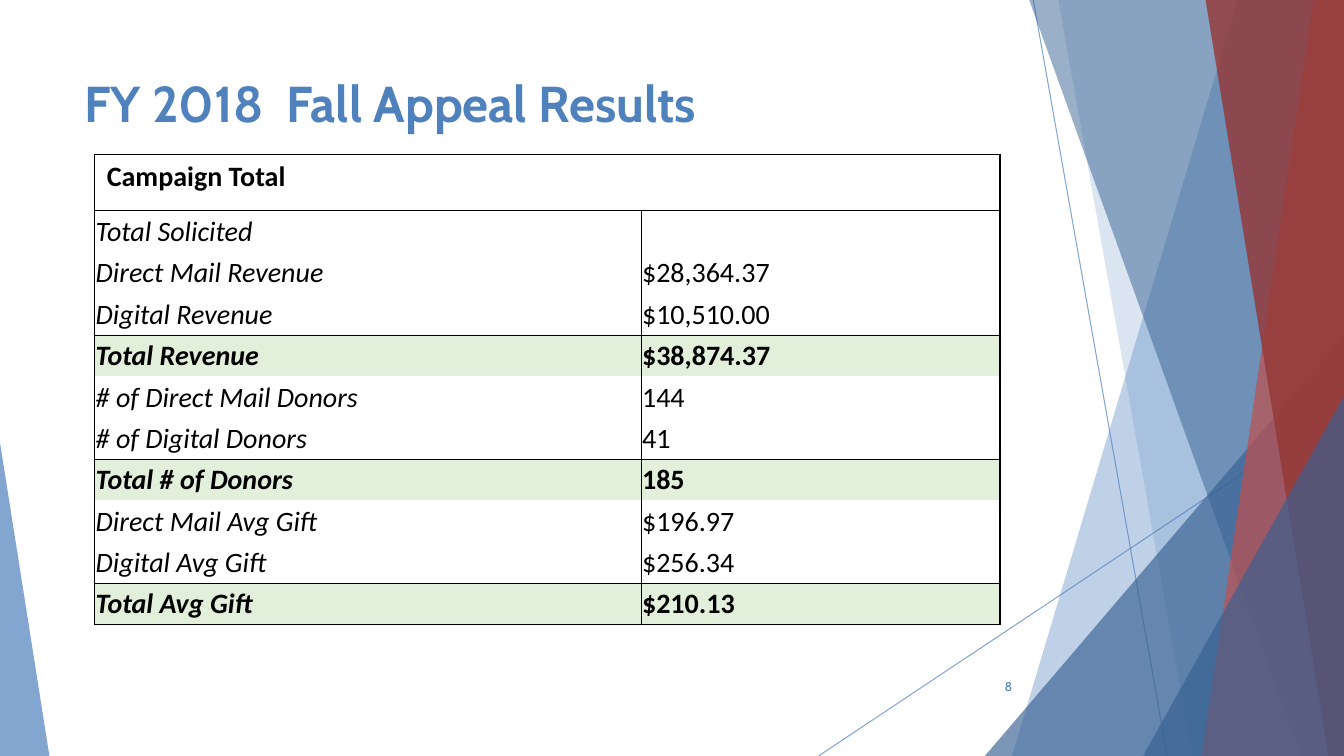
from lxml import etree
from pptx import Presentation
from pptx.dml.color import RGBColor
from pptx.enum.shapes import MSO_CONNECTOR, MSO_SHAPE
from pptx.enum.text import MSO_ANCHOR, PP_ALIGN
from pptx.oxml.ns import qn
from pptx.util import Inches, Pt

STRAIGHT = MSO_CONNECTOR.STRAIGHT
TRIANGLE = MSO_SHAPE.ISOSCELES_TRIANGLE
TOP, MIDDLE = MSO_ANCHOR.TOP, MSO_ANCHOR.MIDDLE
LEFT, RIGHT = PP_ALIGN.LEFT, PP_ALIGN.RIGHT

BLUE, NAVY, RED, MAROON = "4F81BD", "376092", "C0504D", "953735"
BLACK, GREEN = "000000", "E2EFDA"

RESULTS = [
    ("Total Solicited", ""),
    ("Direct Mail Revenue", "$28,364.37"),
    ("Digital Revenue", "$10,510.00"),
    ("Total Revenue", "$38,874.37"),
    ("# of Direct Mail Donors", "144"),
    ("# of Digital Donors", "41"),
    ("Total # of Donors", "185"),
    ("Direct Mail Avg Gift", "$196.97"),
    ("Digital Avg Gift", "$256.34"),
    ("Total Avg Gift", "$210.13"),
]
TOTAL_ROWS = (4, 7, 10)


def color(hex_string):
    return RGBColor.from_string(hex_string)


class SlideBuilder:
    """Places elements by percentages of the slide's width and height."""

    heading_font, table_font = "Cabin", "Calibri"

    def __init__(self, deck):
        self.deck = deck
        self.page = deck.slides.add_slide(deck.slide_layouts[6])

    def across(self, percent):
        return round(self.deck.slide_width * percent / 100)

    def down(self, percent):
        return round(self.deck.slide_height * percent / 100)

    def area(self, left, top, width, height):
        return self.across(left), self.down(top), self.across(width), self.down(height)

    def fade(self, fill, opacity):
        value = fill._xPr.find(qn("a:solidFill"))[0]
        etree.SubElement(value, qn("a:alpha"), val=str(opacity * 1000))

    def paint(self, shape, hex_string, opacity):
        shape.shadow.inherit = False
        shape.fill.solid()
        shape.fill.fore_color.rgb = color(hex_string)
        self.fade(shape.fill, opacity)
        shape.line.fill.background()

    def line(self, x1, y1, x2, y2):
        connector = self.page.shapes.add_connector(
            STRAIGHT, self.across(x1), self.down(y1), self.across(x2), self.down(y2))
        connector.line.width = Pt(0.75)
        connector.line.color.rgb = color(BLUE)
        self.fade(connector.line.fill, 70)
        etree.SubElement(connector._element.spPr, qn("a:effectLst"))

    def band(self, top_x, bottom_x, hex_string, opacity):
        """Full-height band from a slanted left edge to the slide's right edge."""
        outline = self.page.shapes.build_freeform(self.across(top_x), 0)
        corners = [(100, 0), (100, 100), (bottom_x, 100)]
        outline.add_line_segments([(self.across(x), self.down(y)) for x, y in corners])
        self.paint(outline.convert_to_shape(), hex_string, opacity)

    def triangle(self, left, top, width, apex, hex_string, opacity):
        """Triangle standing on the slide's bottom edge."""
        shape = self.page.shapes.add_shape(TRIANGLE, *self.area(left, top, width, 100 - top))
        shape.adjustments[0] = apex
        self.paint(shape, hex_string, opacity)

    def style(self, paragraph, font_name, size, hex_string, bold=False, italic=False):
        for span in paragraph.runs:
            span.font.name = font_name
            span.font.size = Pt(size)
            span.font.color.rgb = color(hex_string)
            span.font.bold = bold
            span.font.italic = italic

    def text(self, words, area, size, bold=False, align=LEFT, anchor=TOP):
        frame = self.page.shapes.add_textbox(*self.area(*area)).text_frame
        frame.word_wrap = True
        frame.vertical_anchor = anchor
        frame.text = words
        paragraph = frame.paragraphs[0]
        paragraph.alignment = align
        self.style(paragraph, self.heading_font, size, BLUE, bold)

    def borders(self, cell, widths):
        """Widths in points for left, right, top and bottom; 0 means no line."""
        properties = cell._tc.get_or_add_tcPr()
        for side, width in zip("LRTB", widths):
            edge = etree.SubElement(properties, qn("a:ln" + side), w=str(Pt(width)))
            if width:
                fill = etree.SubElement(edge, qn("a:solidFill"))
                etree.SubElement(fill, qn("a:srgbClr"), val=BLACK)
            else:
                etree.SubElement(edge, qn("a:noFill"))

    def cell(self, cell, words, margins, widths, bold, italic, anchor, fill=None):
        cell.margin_left, cell.margin_top, cell.margin_right, cell.margin_bottom = map(
            Inches, margins)
        cell.vertical_anchor = anchor
        cell.text_frame.text = words
        self.style(cell.text_frame.paragraphs[0], self.table_font, 20, BLACK, bold, italic)
        self.borders(cell, widths)
        if fill:
            cell.fill.solid()
            cell.fill.fore_color.rgb = color(fill)
        else:
            cell.fill.background()

    def results_table(self, left, top, column_widths, header_height, row_height):
        last = len(RESULTS)
        height = header_height + last * row_height
        table = self.page.shapes.add_table(
            last + 1, 2, *self.area(left, top, sum(column_widths), height)).table
        table.first_row = table.horz_banding = False
        for column, width in zip(table.columns, column_widths):
            column.width = self.across(width)
        for index, row in enumerate(table.rows):
            row.height = self.down(row_height if index else header_height)

        # Merged heading row
        table.cell(0, 0).merge(table.cell(0, 1))
        for column, words in enumerate(("Campaign Total", "")):
            self.cell(table.cell(0, column), words, (0.12, 0.06, 0.12, 0.06),
                      (1, 1, 1, 1), True, False, TOP)

        # Result rows, with totals ruled off and shaded
        for row, pair in enumerate(RESULTS, start=1):
            total = row in TOTAL_ROWS
            upper = 1 if row == 1 else 0.5 if total else 0
            lower = 1 if row == last else 0.5 if row + 1 in TOTAL_ROWS else 0
            for column, words in enumerate(pair):
                sides = (0.5, 1) if column else (1, 0.5)
                self.cell(table.cell(row, column), words, (0.01, 0.01, 0.01, 0),
                          (*sides, upper, lower), total, column == 0, MIDDLE,
                          GREEN if total else None)


def main():
    deck = Presentation()
    deck.slide_width, deck.slide_height = Inches(13.33), Inches(7.5)
    slide = SlideBuilder(deck)

    # Faceted backdrop
    slide.line(76.88, 0, 86.85, 100)
    slide.line(100, 53.73, 60.9, 100)
    slide.band(92.1, 75.3, BLUE, 36)
    slide.band(78.75, 88.73, BLUE, 20)
    slide.triangle(73.28, 44.4, 26.72, 1, NAVY, 66)
    slide.band(76.58, 96.83, NAVY, 50)
    slide.band(97.73, 89.4, RED, 70)
    slide.band(89.7, 98.85, MAROON, 80)
    slide.triangle(85.05, 52.4, 14.95, 1, NAVY, 66)
    slide.triangle(0, 58.53, 3.68, 0, BLUE, 70)

    # Title, page number and results
    slide.text("FY 2018  Fall Appeal Results", (5.55, 8.93, 70.5, 19.2), 36, bold=True)
    slide.text("8", (70.43, 88.13, 5.63, 5.33), 9, align=RIGHT, anchor=MIDDLE)
    slide.results_table(7.05, 20.4, (40.65, 26.7), 7.47, 5.48)

    deck.save("out.pptx")


if __name__ == "__main__":
    main()
